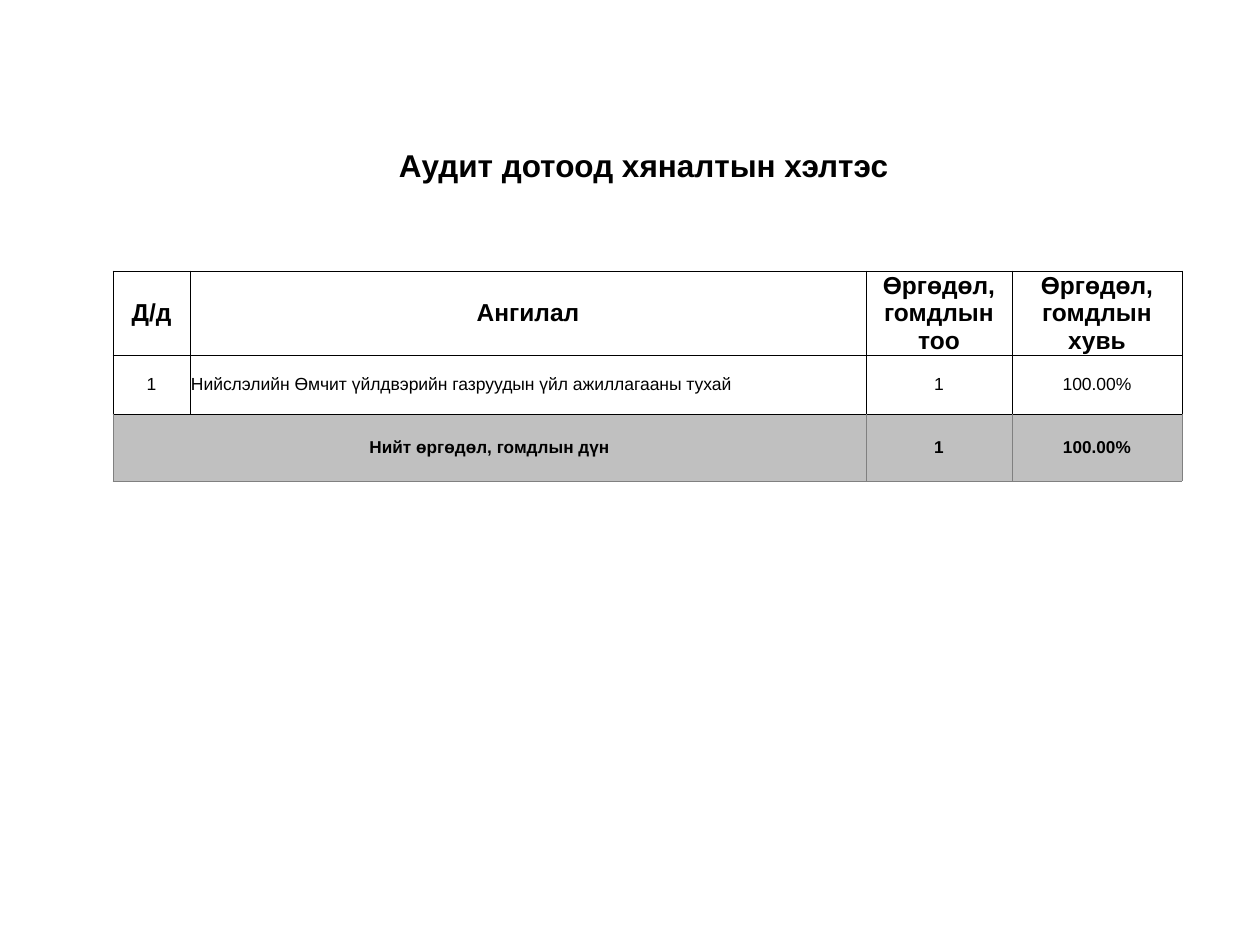
from lxml.etree import SubElement
from pptx import Presentation
from pptx.dml.color import RGBColor
from pptx.enum.text import MSO_ANCHOR as ANCHOR, PP_ALIGN as ALIGN
from pptx.oxml.ns import qn
from pptx.util import Pt

PX = 914400 / 126
BLACK = RGBColor(0x00, 0x00, 0x00)
WHITE = RGBColor(0xFF, 0xFF, 0xFF)
SILVER = RGBColor(0xC0, 0xC0, 0xC0)
GRAY = RGBColor(0x80, 0x80, 0x80)

COLS = [77, 676, 146, 170]
ROWS = [84, 59, 67]
HEADER = ["Д/д", "Ангилал", "Өргөдөл, гомдлын тоо", "Өргөдөл, гомдлын хувь"]
ITEM = ["1", "Нийслэлийн Өмчит үйлдвэрийн газруудын үйл ажиллагааны тухай", "1", "100.00%"]
TOTAL = ["Нийт өргөдөл, гомдлын дүн", "", "1", "100.00%"]


def px(n):
    """Turn pixels into EMU."""
    return round(n * PX)


def style(p, size, bold, align=ALIGN.CENTER):
    """Set the font and alignment of a paragraph."""
    p.alignment = align
    p.font.name = "Arial"
    p.font.size = Pt(size)
    p.font.bold = bold
    p.font.color.rgb = BLACK


def add_borders(cell, side, top):
    """Draw half-point borders, with the top in its own colour."""
    tc_pr = cell._tc.get_or_add_tcPr()
    for tag, color in zip(("lnL", "lnR", "lnT", "lnB"), (side, side, top, side)):
        ln = SubElement(tc_pr, qn(f"a:{tag}"), w=str(Pt(0.5)))
        fill = SubElement(ln, qn("a:solidFill"))
        SubElement(fill, qn("a:srgbClr"), val=str(color))


def add_title(s, x, y, w, h):
    """Place the slide title in the given box."""
    title = s.shapes.title
    title.left, title.top, title.width, title.height = map(px, (x, y, w, h))
    tf = title.text_frame
    tf.text = "Аудит дотоод хяналтын хэлтэс "
    tf.vertical_anchor = ANCHOR.MIDDLE
    p = tf.paragraphs[0]
    p.line_spacing = 0.9
    style(p, 18, True)


def add_complaints_table(s, x, y):
    """Place the table of complaints with its total row."""
    box = map(px, (x, y, sum(COLS), sum(ROWS)))
    table = s.shapes.add_table(len(ROWS), len(COLS), *box).table
    table.first_row = table.horz_banding = False
    for col, w in zip(table.columns, COLS):
        col.width = px(w)
    looks = [(14, True, WHITE, BLACK), (10, False, WHITE, BLACK), (9.8, True, SILVER, GRAY)]
    for i, (texts, look) in enumerate(zip((HEADER, ITEM, TOTAL), looks)):
        size, bold, fill, border = look
        table.rows[i].height = px(ROWS[i])
        for j, text in enumerate(texts):
            cell = table.cell(i, j)
            cell.text = text
            cell.vertical_anchor = ANCHOR.MIDDLE
            cell.margin_left = cell.margin_right = cell.margin_top = px(1)
            cell.margin_bottom = 0
            align = ALIGN.LEFT if (i, j) == (1, 1) else ALIGN.CENTER
            style(cell.text_frame.paragraphs[0], size, bold, align)
            add_borders(cell, border, BLACK)
            cell.fill.solid()
            cell.fill.fore_color.rgb = fill
    table.cell(2, 0).merge(table.cell(2, 1))


def main():
    """Build the slide and save it."""
    prs = Presentation()
    prs.slide_width, prs.slide_height = px(1260), px(945)
    s = prs.slides.add_slide(prs.slide_layouts[5])
    add_title(s, 113, 121, 1070, 93)
    add_complaints_table(s, 113, 271)
    prs.save("out.pptx")


if __name__ == "__main__":
    main()
